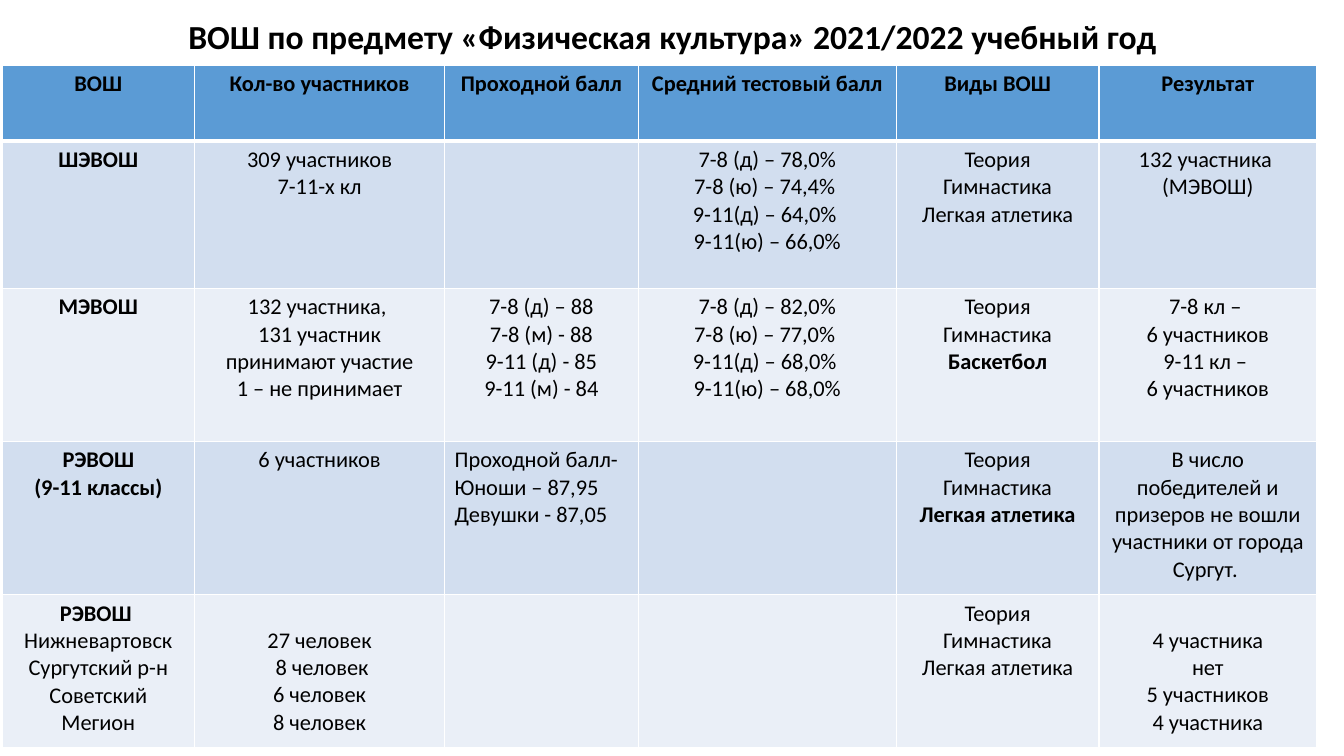
import pptx
import pptx.util
import pptx.dml.color
import pptx.enum.text
from lxml import etree
from pptx.oxml.ns import qn

# Content: a cell is a list of lines, "*" marks a bold line
TITLE = "ВОШ по предмету «Физическая культура» 2021/2022 учебный год"
HEADER = ["ВОШ", "Кол-во участников", "Проходной балл",
          "Средний тестовый балл", "Виды ВОШ", "Результат"]
SPORTS = ["Теория", "Гимнастика"]
ROWS = [
    [["*ШЭВОШ"],
     ["309 участников", "7-11-х кл"],
     [],
     ["7-8 (д) – 78,0%", "7-8 (ю) – 74,4% ", "9-11(д) – 64,0% ", "9-11(ю) – 66,0%"],
     SPORTS + ["Легкая атлетика"],
     ["132 участника ", "(МЭВОШ)"]],
    [["*МЭВОШ"],
     ["132 участника, ", "131 участник принимают участие", "1 – не принимает"],
     ["7-8 (д) – 88", "7-8 (м) - 88", "9-11 (д) - 85", "9-11 (м) - 84"],
     ["7-8 (д) – 82,0%", "7-8 (ю) – 77,0% ", "9-11(д) – 68,0% ", "9-11(ю) – 68,0%"],
     SPORTS + ["*Баскетбол"],
     ["7-8 кл – ", "6 участников", "9-11 кл – ", "6 участников"]],
    [["*РЭВОШ", "*(9-11 классы)"],
     ["6 участников"],
     ["Проходной балл-", "Юноши – 87,95", "Девушки - 87,05"],
     [],
     SPORTS + ["*Легкая атлетика"],
     ["В число победителей и призеров не вошли участники от города Сургут. "]],
    [["*РЭВОШ ", "Нижневартовск", "Сургутский р-н", "Советский", "Мегион"],
     ["27 человек", " 8 человек", "6 человек", "8 человек"],
     [],
     [],
     SPORTS + ["Легкая атлетика"],
     ["4 участника", "нет", "5 участников", "4 участника"]],
]
LEFT_ALIGNED = {(3, 2)}            # (row, column)
ONE_LINE_DOWN = {(4, 1), (4, 5)}   # cells level with the list of towns

# Layout in inches
SLIDE_W, SLIDE_H = 13.33, 7.5
TITLE_BOX = (0.92, 0.15, 11.5, 0.47)
TABLE_LEFT, TABLE_TOP = 0.02, 0.65
COLUMNS = [1.91, 2.48, 1.92, 2.56, 2.01, 2.16]
ROW_HEIGHTS = [0.75, 1.46] + [1.52] * 3
CELL_MARGIN, LINE_HEIGHT = 0.05, 0.27

THEME = {
    "font": "Calibri", "text": "000000", "border": "FFFFFF",
    "header": "5B9BD5", "bands": ("EAEFF7", "D2DEEF"),
    "title_size": 24, "cell_size": 16,
    "border_width": 1, "header_rule": 3,
}

Inches, Pt = pptx.util.Inches, pptx.util.Pt
RGB = pptx.dml.color.RGBColor.from_string
ALIGN = pptx.enum.text.PP_ALIGN


def add_run(p, text, size, bold):
    r = p.add_run()
    r.text = text
    r.font.name = THEME["font"]
    r.font.size = Pt(size)
    r.font.bold = bold
    r.font.color.rgb = RGB(THEME["text"])


def set_border(cell, side, width):
    ln = etree.SubElement(cell._tc.get_or_add_tcPr(), qn("a:ln" + side), w=str(Pt(width)))
    fill = etree.SubElement(ln, qn("a:solidFill"))
    etree.SubElement(fill, qn("a:srgbClr"), val=THEME["border"])


def fill_cell(cell, lines, row, col):
    for side in "LRTB":
        heavy = (row, side) in ((0, "B"), (1, "T"))
        set_border(cell, side, THEME["header_rule" if heavy else "border_width"])
    cell.fill.solid()
    cell.fill.fore_color.rgb = RGB(THEME["bands"][row % 2] if row else THEME["header"])
    drop = LINE_HEIGHT if (row, col) in ONE_LINE_DOWN else 0
    cell.margin_top = Inches(CELL_MARGIN + drop)
    tf = cell.text_frame
    for i, line in enumerate(lines):
        p = tf.add_paragraph() if i else tf.paragraphs[0]
        p.alignment = ALIGN.LEFT if (row, col) in LEFT_ALIGNED else ALIGN.CENTER
        add_run(p, line.lstrip("*"), THEME["cell_size"], line.startswith("*"))


def main():
    prs = pptx.Presentation()
    prs.slide_width, prs.slide_height = Inches(SLIDE_W), Inches(SLIDE_H)
    s = prs.slides.add_slide(prs.slide_layouts[5])

    # Title
    sp = s.shapes.title
    sp.left, sp.top, sp.width, sp.height = map(Inches, TITLE_BOX)
    tf = sp.text_frame
    tf.word_wrap = True
    tf.auto_size = pptx.enum.text.MSO_AUTO_SIZE.NONE
    tf.vertical_anchor = pptx.enum.text.MSO_ANCHOR.MIDDLE
    p = tf.paragraphs[0]
    p.alignment = ALIGN.CENTER
    p.line_spacing = 0.9
    add_run(p, TITLE, THEME["title_size"], True)

    # Table
    grid = [[["*" + name] for name in HEADER]] + ROWS
    table = s.shapes.add_table(
        len(grid), len(COLUMNS), Inches(TABLE_LEFT), Inches(TABLE_TOP),
        Inches(sum(COLUMNS)), Inches(sum(ROW_HEIGHTS))).table
    for column, width in zip(table.columns, COLUMNS):
        column.width = Inches(width)
    for table_row, height in zip(table.rows, ROW_HEIGHTS):
        table_row.height = Inches(height)
    for row, cells in enumerate(grid):
        for col, lines in enumerate(cells):
            fill_cell(table.cell(row, col), lines, row, col)

    prs.save("out.pptx")


if __name__ == "__main__":
    main()
